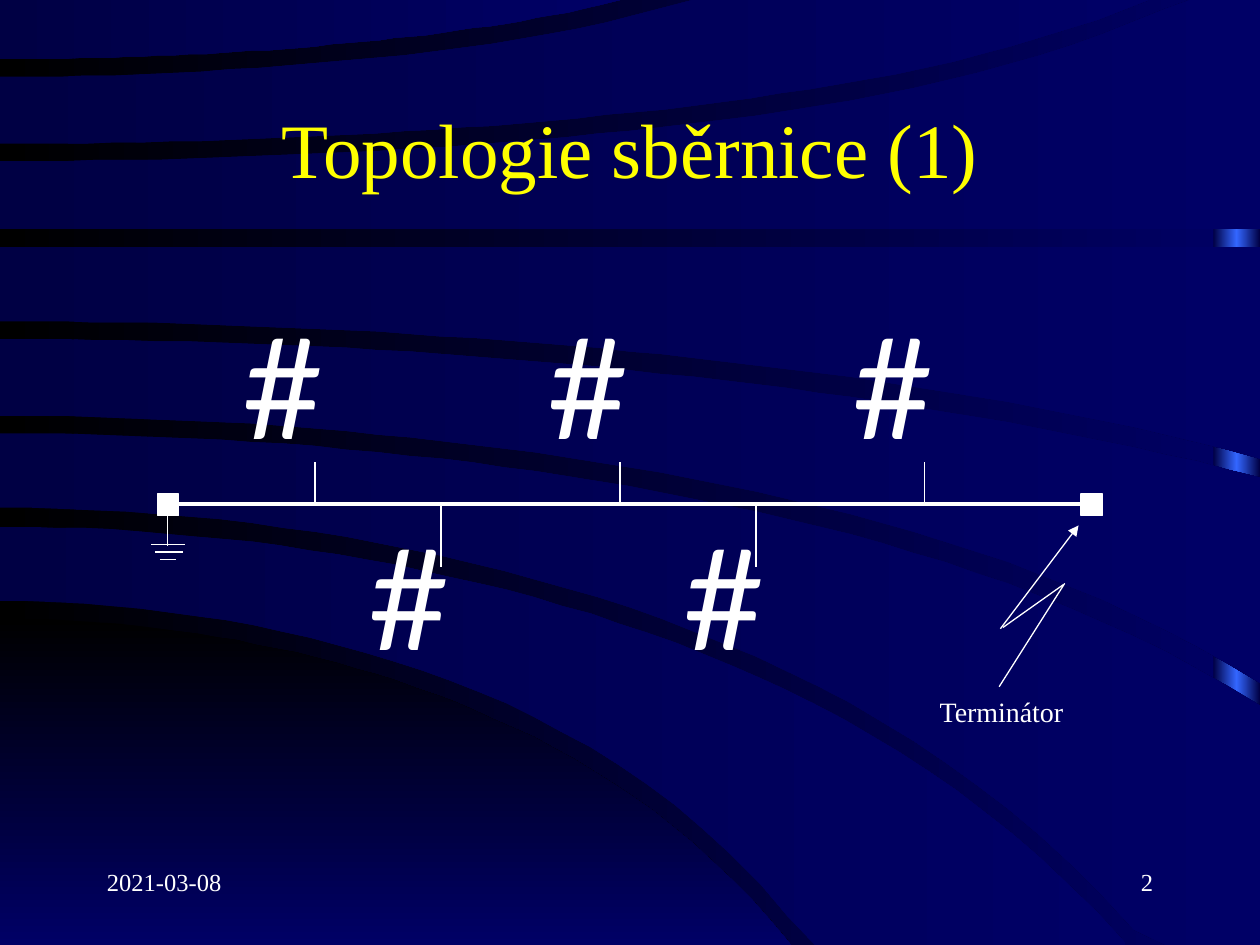
"""Build the slide on bus topology: a terminated line with five stations."""
from copy import deepcopy

from lxml import etree
from pptx import Presentation
from pptx import util as u
from pptx.dml.color import RGBColor
from pptx.enum import shapes, text
from pptx.oxml import ns

PX = 9144
STEPS = 40
WHITE, YELLOW, NAVY, DARK, BLACK, GLOW = "FFFFFF", "FFFF00", "000066", "000044", "000000", "3366FF"
SERIF, SANS = "Times New Roman", "Lato"
rgb = RGBColor.from_string


def gradient(fill, root, colours, angle=0):
    fill.gradient()
    fill.gradient_angle = angle
    stops = root.xpath(".//a:gsLst")[0]
    for _ in colours[2:]:
        stops.append(deepcopy(stops[-1]))
    for i, (stop, colour) in enumerate(zip(fill.gradient_stops, colours)):
        stop.color.rgb = rgb(colour)
        stop.position = i / (len(colours) - 1)


def write(sp, words, size, font, colour, align):
    p = sp.text_frame.paragraphs[0]
    p.alignment = align
    r = p.add_run()
    r.text = words
    r.font.size = u.Pt(size)
    r.font.name = font
    r.font.color.rgb = rgb(colour)


prs = Presentation()
prs.slide_width, prs.slide_height = 1000 * PX, 750 * PX
s = prs.slides.add_slide(prs.slide_layouts[5])
gradient(s.background.fill, s.background._cSld, [BLACK, NAVY])

strip = s.shapes.add_shape(shapes.MSO_SHAPE.RECTANGLE, 963 * PX, 0, 37 * PX, 750 * PX)
strip.shadow.inherit = False
strip.line.fill.background()
gradient(strip.fill, strip._element, [DARK, GLOW, DARK])

# Each edge is (start, a, b) for y = start + a*t**2 + b*t**6, t = x/1000.
bands = [
    (628, (491, 491, 1068), (750, 0, 0)),
    (893, (418, 308, 167), (477, 477, 1062)),
    (1000, (344, 166, 50), (403, 308, 160)),
    (1000, (269, 99, 11), (330, 161, 51)),
    (1000, (196, 0, 0), (255, 94, 15)),
    (1000, (128, -92, -68), (182, 0, 0)),
    (917, (61, -165, -408), (114, -94, -62)),
    (501, (-2, 0, 0), (47, -164, -493))]
for i, (width, top, bottom) in enumerate(bands):
    xs = [width * step / STEPS for step in range(STEPS + 1)]
    points = []
    for (start, a, b), row in ((top, xs), (bottom, xs[::-1])):
        for x in row:
            t = x / 1000
            points.append((x, max(-2, min(750, start + a * t**2 + b * t**6))))
    pen = s.shapes.build_freeform(*points[0], scale=PX)
    pen.add_line_segments(points[1:], close=True)
    sp = pen.convert_to_shape()
    sp.shadow.inherit = False
    sp.line.fill.background()
    gradient(sp.fill, sp._element, [DARK if i else BLACK, NAVY], 0 if i else 270)

title = s.shapes.title
title.left, title.top, title.width, title.height = 75 * PX, 42 * PX, 850 * PX, 150 * PX
title.text_frame.vertical_anchor = text.MSO_ANCHOR.MIDDLE
write(title, "Topologie sběrnice (1)", 44, SERIF, YELLOW, text.PP_ALIGN.CENTER)
s.shapes._spTree.append(title._element)

left, right = text.PP_ALIGN.LEFT, text.PP_ALIGN.RIGHT
stations = [(183, 233), (425, 233), (667, 233), (283, 400), (533, 400)]
labels = [
    (75, 683, 208, 50, "2021-03-08", 14, SERIF, left, True),
    (717, 683, 208, 50, "2", 14, SERIF, right, True),
    (736, 546, 120, 37, "Terminátor", 16, SERIF, left, False)]
labels += [(x, y, 142, 143, "#", 80, SANS, left, True) for x, y in stations]
for x, y, w, h, words, size, font, align, wrap in labels:
    sp = s.shapes.add_textbox(x * PX, y * PX, w * PX, h * PX)
    sp.text_frame.word_wrap = wrap
    write(sp, words, size, font, WHITE, align)

bus = [(133, 400, 867, 400)]
drops = [(x + 67, 367, x + 67, 400) for x, y in stations[:3]]
drops += [(x + 67, 400, x + 67, 450) for x, y in stations[3:]]
ground = [(133, 402, 133, 433)]
ground += [(x1, y, x2, y) for x1, x2, y in ((120, 147, 432), (123, 145, 438), (127, 140, 444))]
arrow = [(794, 499, 856, 417)]
bolt = [(796, 498, 844, 464), (845, 463, 793, 545)]
for group in (bus, drops, ground, arrow, bolt):
    for x1, y1, x2, y2 in group:
        line = s.shapes.add_connector(
            shapes.MSO_CONNECTOR.STRAIGHT, x1 * PX, y1 * PX, x2 * PX, y2 * PX)
        line.line.color.rgb = rgb(WHITE)
        line.line.width = u.Pt(2.25 if group is bus else 0.75)
        if group is arrow:
            etree.SubElement(line.line._get_or_add_ln(), ns.qn("a:tailEnd"), type="triangle")
        etree.SubElement(line._element.spPr, ns.qn("a:effectLst"))

for x in (125, 858):
    sp = s.shapes.add_shape(shapes.MSO_SHAPE.RECTANGLE, x * PX, 392 * PX, 17 * PX, 17 * PX)
    sp.shadow.inherit = False
    sp.fill.solid()
    sp.fill.fore_color.rgb = rgb(WHITE)
    sp.line.color.rgb = rgb(WHITE)
    sp.line.width = u.Pt(0.75)

prs.save("out.pptx")
